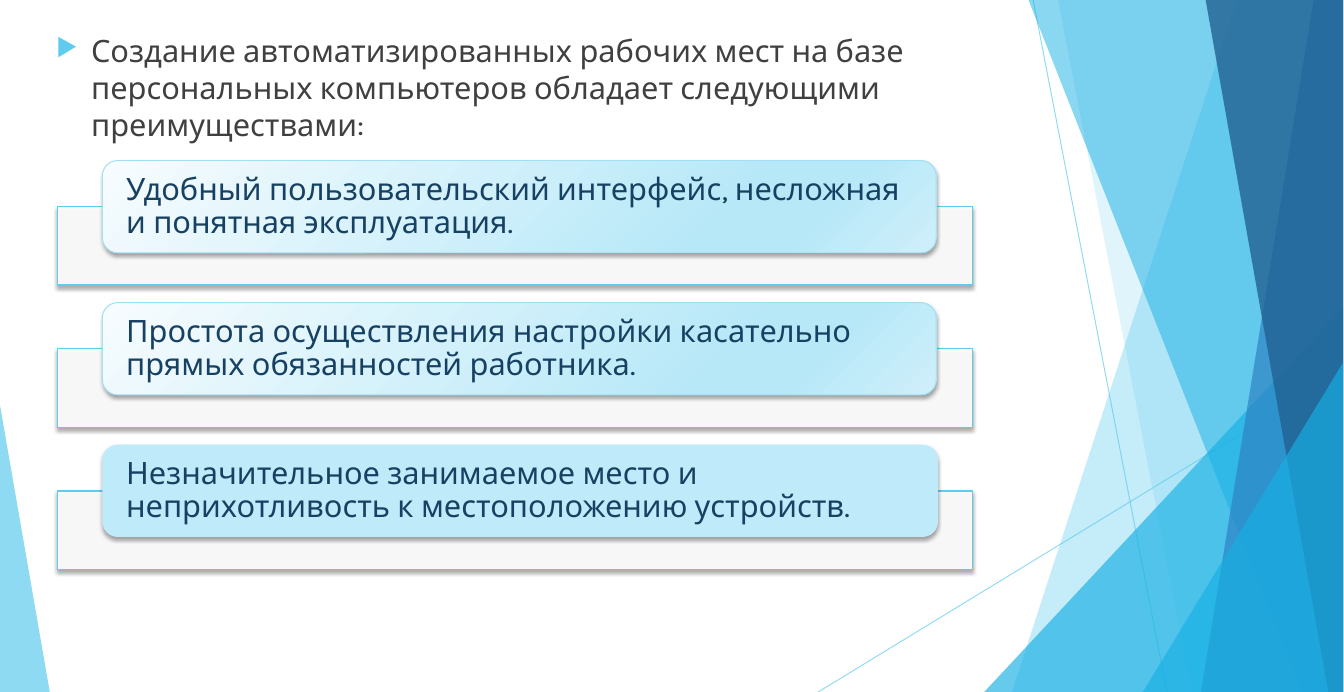
from pptx import Presentation
from pptx.dml.color import RGBColor
from pptx.enum.shapes import MSO_CONNECTOR, MSO_SHAPE
from pptx.enum.text import MSO_ANCHOR, PP_ALIGN
from pptx.oxml.ns import qn
from pptx.util import Inches, Pt
from lxml import etree

RECTANGLE, ROUNDED = MSO_SHAPE.RECTANGLE, MSO_SHAPE.ROUNDED_RECTANGLE
TRIANGLE, STRAIGHT = MSO_SHAPE.ISOSCELES_TRIANGLE, MSO_CONNECTOR.STRAIGHT
MIDDLE, LEFT = MSO_ANCHOR.MIDDLE, PP_ALIGN.LEFT

# Content
INTRO = ("Создание автоматизированных рабочих мест на базе персональных "
         "компьютеров обладает следующими преимуществами:")
ADVANTAGES = [
    "Удобный пользовательский интерфейс, несложная и понятная эксплуатация.",
    "Простота осуществления настройки касательно прямых обязанностей работника.",
    "Незначительное занимаемое место и неприхотливость к местоположению устройств.",
]

THEME = {
    "font": "Karla", "size": 24,
    "body": "404040", "card_text": "174162", "white": "FFFFFF",
    "sky": "5FCBEF", "azure": "17B0E4", "blue": "2E83C3", "navy": "226292",
    "card_line": "9FE0F5", "card_plain": "BFEAF9", "shadow": "000000",
    "card_stops": [(0, "F7FCFE"), (74, "B7E8F8"), (83, "B7E8F8"), (100, "CFEFFA")],
}

# Decoration, back to front
WIDTH, HEIGHT, EDGE = 14.57, 7.5, 14.56
RAYS = [((11.2, 0), (12.65, HEIGHT)), ((EDGE, 4.03), (8.87, HEIGHT))]
# A band has its left edge's x at top and bottom; a corner has left, top, width, apex
FACETS = [
    ("band", (13.41, 10.97), "sky", 36),
    ("band", (11.47, 12.92), "sky", 20),
    ("corner", (10.67, 3.33, 3.89, 1), "azure", 66),
    ("band", (11.15, 14.11), "azure", 50),
    ("band", (14.24, 13.02), "blue", 70),
    ("band", (13.07, 14.4), "navy", 80),
    ("corner", (12.39, 3.93, 2.17, 1), "azure", 66),
    ("corner", (0, 4.39, 0.54, 0), "sky", 70),
]

# Advantage rows
ROW_TOP, ROW_PITCH = 1.74, 1.54
PANEL_LEFT, PANEL_DROP, PANEL_WIDTH, PANEL_HEIGHT = 0.62, 0.5, 9.92, 0.85
CARD_LEFT, CARD_WIDTH, PLAIN_WIDTH, CARD_HEIGHT = 1.11, 9.04, 9.06, 1


def color(name):
    return RGBColor.from_string(THEME[name])


def add_alpha(color_node, percent):
    etree.SubElement(color_node, qn("a:alpha"), val=str(percent * 1000))


def paint(shape, fill, opacity=100, line=None, line_width=1):
    shape.shadow.inherit = False
    shape.fill.solid()
    shape.fill.fore_color.rgb = color(fill)
    if opacity < 100:
        add_alpha(shape.element.spPr.find(".//" + qn("a:srgbClr")), opacity)
    if line:
        shape.line.color.rgb = color(line)
        shape.line.width = Pt(line_width)
    else:
        shape.line.fill.background()


def add_shadow(shape):
    effects = shape.element.spPr.find(qn("a:effectLst"))
    shadow = etree.SubElement(effects, qn("a:outerShdw"), blurRad=str(Pt(3)),
                              dist=str(Pt(2)), dir="5400000", rotWithShape="0")
    add_alpha(etree.SubElement(shadow, qn("a:srgbClr"), val=THEME["shadow"]), 35)


def shade_card(card):
    card.fill.gradient()
    card.fill.gradient_angle = 315
    stops = card.element.spPr.find(".//" + qn("a:gsLst"))
    for stop in list(stops):
        stops.remove(stop)
    for position, value in THEME["card_stops"]:
        stop = etree.SubElement(stops, qn("a:gs"), pos=str(position * 1000))
        etree.SubElement(stop, qn("a:srgbClr"), val=value)


def write(frame, text, text_color):
    frame.word_wrap = True
    para = frame.paragraphs[0]
    para.text = text
    para.alignment = LEFT
    para.font.name = THEME["font"]
    para.font.size = Pt(THEME["size"])
    para.font.color.rgb = color(text_color)
    return para


def add_ray(page, start, end):
    ray = page.shapes.add_connector(STRAIGHT, *map(Inches, start + end))
    ray.line.color.rgb = color("sky")
    ray.line.width = Pt(0.75)
    properties = ray.element.spPr
    add_alpha(properties.find(".//" + qn("a:srgbClr")), 70)
    etree.SubElement(properties, qn("a:effectLst"))


def add_facet(page, kind, geometry, fill, opacity):
    if kind == "band":
        top_x, bottom_x = geometry
        builder = page.shapes.build_freeform(Inches(top_x), 0)
        corners = [(EDGE, 0), (EDGE, HEIGHT), (bottom_x, HEIGHT)]
        builder.add_line_segments([(Inches(x), Inches(y)) for x, y in corners])
        facet = builder.convert_to_shape()
    else:
        left, top, width, apex = geometry
        facet = page.shapes.add_shape(TRIANGLE, Inches(left), Inches(top),
                                      Inches(width), Inches(HEIGHT - top))
        facet.adjustments[0] = apex
    paint(facet, fill, opacity)


def add_intro(page):
    box = page.shapes.add_textbox(Inches(0.51), Inches(0.3), Inches(10.67), Inches(1.64))
    para = write(box.text_frame, INTRO, "body")
    para.space_before = Pt(10)
    properties = para._p.get_or_add_pPr()
    properties.set("marL", str(Inches(0.38)))
    properties.set("indent", str(Inches(-0.38)))
    # Bullet, placed ahead of the default run properties
    bullet_color = etree.Element(qn("a:buClr"))
    etree.SubElement(bullet_color, qn("a:srgbClr"), val=THEME["sky"])
    bullet_size = etree.Element(qn("a:buSzPct"), val="80000")
    bullet = etree.Element(qn("a:buChar"), char="▶")
    defaults = properties.find(qn("a:defRPr"))
    for node in (bullet_color, bullet_size, bullet):
        defaults.addprevious(node)


def add_advantage(page, index, text):
    top = ROW_TOP + index * ROW_PITCH
    plain = index == len(ADVANTAGES) - 1
    panel = page.shapes.add_shape(RECTANGLE, Inches(PANEL_LEFT), Inches(top + PANEL_DROP),
                                  Inches(PANEL_WIDTH), Inches(PANEL_HEIGHT))
    paint(panel, "white", 90, "sky")
    add_shadow(panel)

    card = page.shapes.add_shape(ROUNDED, Inches(CARD_LEFT), Inches(top),
                                 Inches(PLAIN_WIDTH if plain else CARD_WIDTH),
                                 Inches(CARD_HEIGHT))
    paint(card, "card_plain", line=None if plain else "card_line", line_width=0.75)
    if not plain:
        shade_card(card)
    add_shadow(card)
    frame = card.text_frame
    # The rounded shape already insets its text by about 0.05
    frame.margin_left = frame.margin_right = Inches(0.21)
    frame.margin_top = frame.margin_bottom = 0
    frame.vertical_anchor = MIDDLE
    write(frame, text, "card_text").line_spacing = 0.9


def main():
    deck = Presentation()
    deck.slide_width, deck.slide_height = Inches(WIDTH), Inches(HEIGHT)
    page = deck.slides.add_slide(deck.slide_layouts[6])
    for start, end in RAYS:
        add_ray(page, start, end)
    for facet in FACETS:
        add_facet(page, *facet)
    add_intro(page)
    for index, text in enumerate(ADVANTAGES):
        add_advantage(page, index, text)
    deck.save("out.pptx")


if __name__ == "__main__":
    main()
